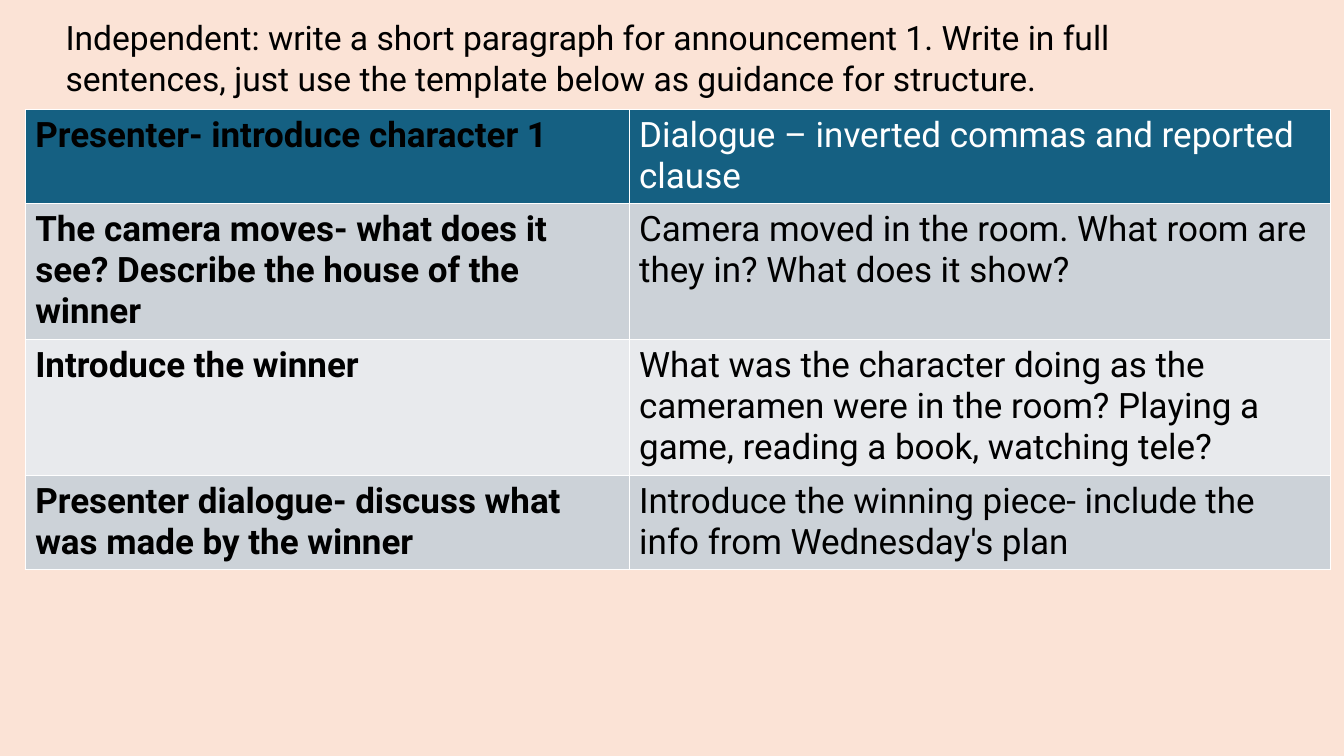
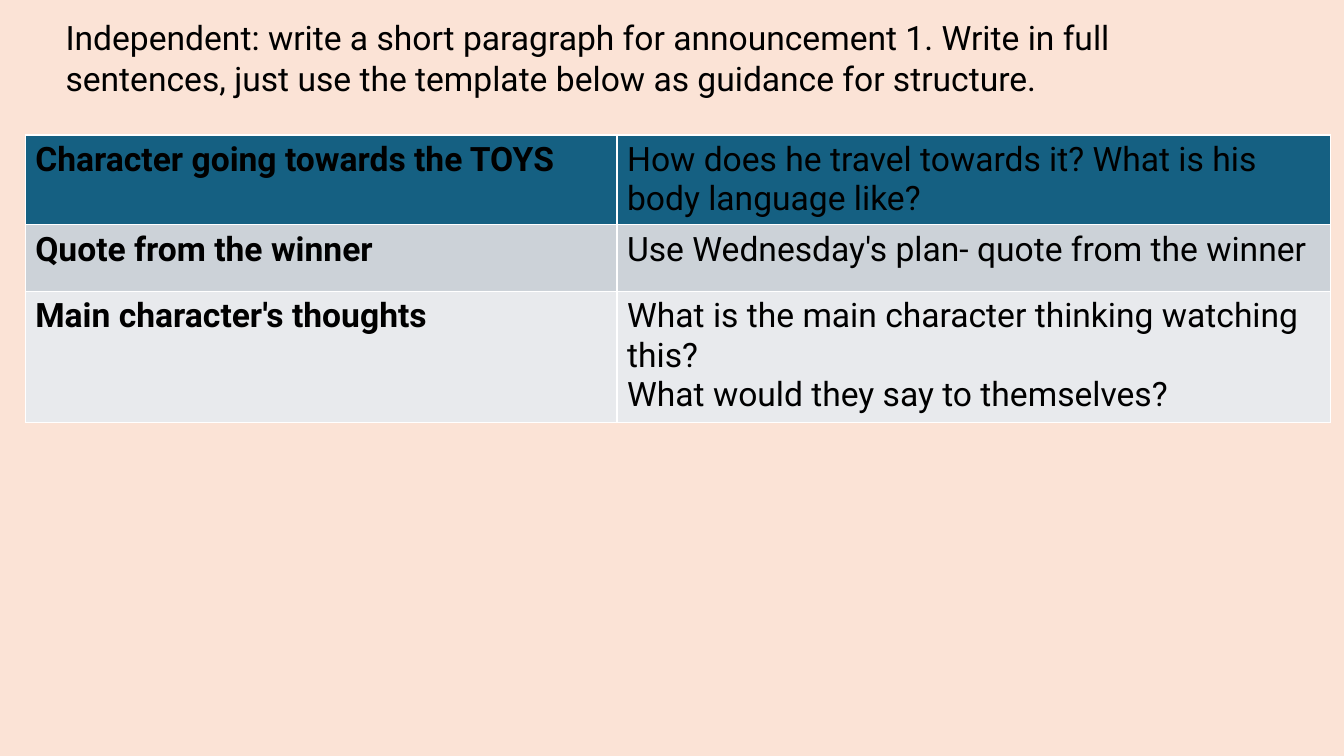
from dataclasses import dataclass

from pptx import Presentation
from pptx.dml.color import RGBColor as Rgb
from pptx.enum.text import MSO_ANCHOR as Anchor, MSO_AUTO_SIZE as Fit, PP_ALIGN as Align
from pptx.oxml.ns import qn
from pptx.util import Inches, Pt
from lxml.etree import SubElement as Sub

# Shared style
FACE = "Roboto"
PEACH, BLUE, GREY, PALE = "FBE3D6", "156082", "CCD2D8", "E8EAED"
BLACK, WHITE = "000000", "FFFFFF"
LEFT = 0.25
TASK = ("Independent: write a short paragraph for announcement 1. Write in full "
        "sentences, just use the template below as guidance for structure.")


@dataclass
class Row:
    label: str
    notes: list[str]
    height: float
    ink: str = BLACK


@dataclass
class Plan:
    top: float
    widths: tuple[float, float]
    size: int
    rows: list[Row]


PLANS = [
    Plan(1.09, (5.99, 6.96), 25, [
        Row("Presenter- introduce character 1",
            ["Dialogue – inverted commas and reported clause"], 0.93, WHITE),
        Row("The camera moves- what does it see? Describe the house of the winner",
            ["Camera moved in the room. What room are they in? What does it show?"], 1.35),
        Row("Introduce the winner",
            ["What was the character doing as the cameramen were in the room? "
             "Playing a game, reading a book, watching tele?"], 1.35),
        Row("Presenter dialogue- discuss what was made by the winner",
            ["Introduce the winning piece- include the info from Wednesday's plan"], 0.93),
    ]),
    Plan(1.34, (5.87, 7.08), 24, [
        Row("Character going towards the TOYS",
            ["How does he travel towards it? What is his body language like?"], 0.89),
        Row("Quote from the winner",
            ["Use Wednesday's plan- quote from the winner"], 0.66),
        Row("Main character's thoughts",
            ["What is the main character thinking watching this?",
             "What would they say to themselves?"], 1.3),
    ]),
]


def paint(fill, color: str) -> None:
    fill.solid()
    fill.fore_color.rgb = Rgb.from_string(color)


def write(frame, lines: list[str], size: int, color: str = BLACK, bold: bool = False) -> None:
    for i, line in enumerate(lines):
        para = frame.paragraphs[0] if i == 0 else frame.add_paragraph()
        run = para.add_run()
        run.text = line
        font = run.font
        font.name, font.size, font.bold = FACE, Pt(size), bold
        font.color.rgb = Rgb.from_string(color)


def edge(cell, color: str = WHITE, width: float = 1) -> None:
    props = cell._tc.get_or_add_tcPr()
    for side in ("a:lnL", "a:lnR", "a:lnT", "a:lnB"):
        line = Sub(props, qn(side), w=str(Pt(width)))
        Sub(Sub(line, qn("a:solidFill")), qn("a:srgbClr"), val=color)


def head(slide) -> None:
    title = slide.shapes.title
    title.left, title.top = Inches(0.55), Inches(0.12)
    title.width, title.height = Inches(11.95), Inches(0.91)
    frame = title.text_frame
    frame.word_wrap, frame.auto_size = True, Fit.NONE
    frame.vertical_anchor = Anchor.TOP
    write(frame, [TASK], 24)
    frame.paragraphs[0].alignment = Align.LEFT


def grid(slide, plan: Plan) -> None:
    tall = sum(row.height for row in plan.rows)
    table = slide.shapes.add_table(
        len(plan.rows), 2, Inches(LEFT), Inches(plan.top),
        Inches(sum(plan.widths)), Inches(tall)).table
    for col, width in zip(table.columns, plan.widths):
        col.width = Inches(width)
    for i, row in enumerate(plan.rows):
        table.rows[i].height = Inches(row.height)
        # Header band, then alternating greys
        band = BLUE if i == 0 else (PALE, GREY)[i % 2]
        label, notes = table.cell(i, 0), table.cell(i, 1)
        for cell in (label, notes):
            edge(cell)
            paint(cell.fill, band)
        write(label.text_frame, [row.label], plan.size, bold=True)
        write(notes.text_frame, row.notes, plan.size, row.ink)


def main() -> None:
    deck = Presentation()
    deck.slide_width, deck.slide_height = Inches(13.33), Inches(7.5)
    paint(deck.slide_master.background.fill, PEACH)
    for plan in PLANS:
        slide = deck.slides.add_slide(deck.slide_layouts.get_by_name("Title Only"))
        head(slide)
        grid(slide, plan)
    deck.save("out.pptx")


if __name__ == "__main__":
    main()
